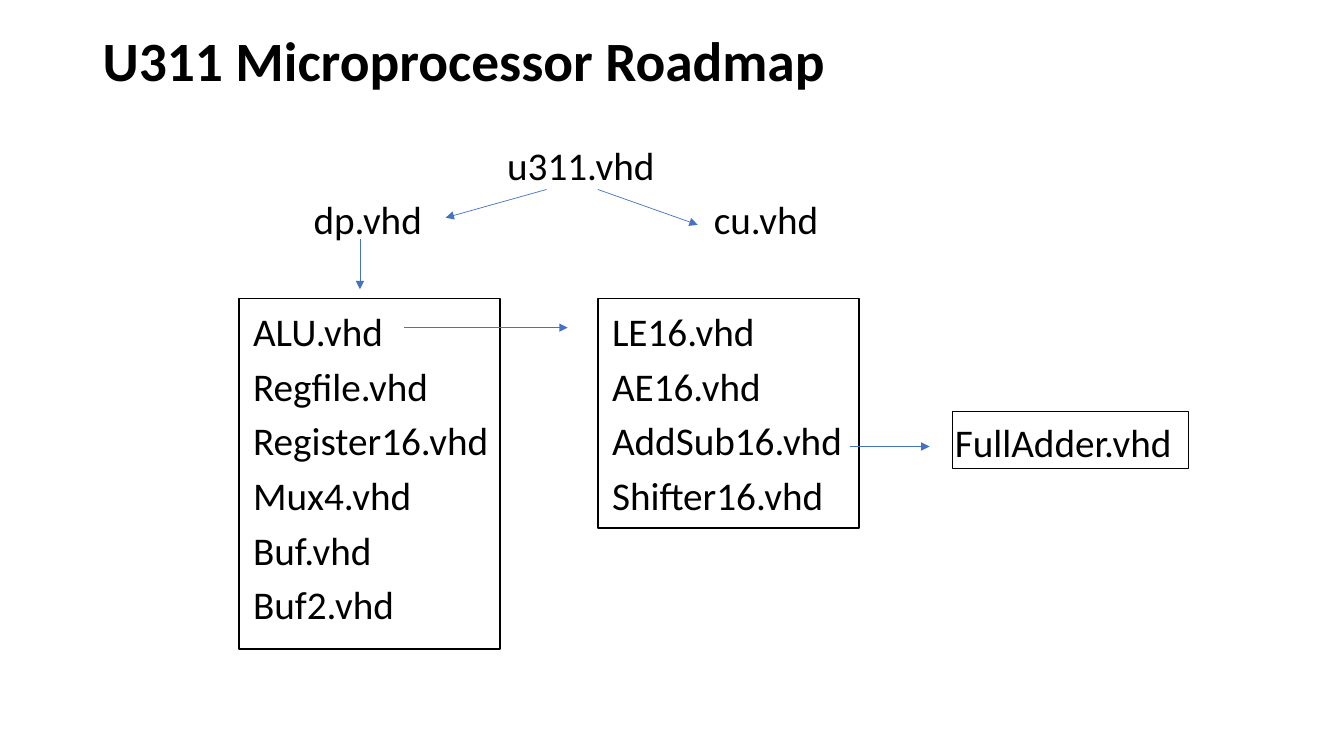
from lxml import etree
from pptx import Presentation
from pptx.dml.color import RGBColor
from pptx.enum.shapes import MSO_CONNECTOR, MSO_SHAPE
from pptx.enum.text import MSO_ANCHOR, PP_ALIGN
from pptx.oxml.ns import qn
from pptx.util import Inches, Pt

RECTANGLE = MSO_SHAPE.RECTANGLE
STRAIGHT = MSO_CONNECTOR.STRAIGHT
LEFT = PP_ALIGN.LEFT
TOP, MIDDLE = MSO_ANCHOR.TOP, MSO_ANCHOR.MIDDLE
COLORS = {"ink": "000000", "arrow": "4472C4"}
FONT = "Calibri"

LABELS = [
    ("u311.vhd", 5.03, 1.4),
    ("dp.vhd", 3.11, 1.94),
    ("cu.vhd", 7.08, 1.94),
]
DATAPATH_FILES = ["ALU.vhd", "Regfile.vhd", "Register16.vhd",
                  "Mux4.vhd", "Buf.vhd", "Buf2.vhd"]
ALU_FILES = ["LE16.vhd", "AE16.vhd", "AddSub16.vhd", "Shifter16.vhd"]
ADDER_FILES = ["FullAdder.vhd"]
FILE_BOXES = [
    (DATAPATH_FILES, (2.37, 2.96, 2.59, 3.48), (0.14, 0.09)),
    (ALU_FILES, (5.93, 2.96, 2.59, 2.28), (0.14, 0.09)),
    (ADDER_FILES, (9.45, 4.08, 2.34, 0.57), (0.02, 0.07)),
]
ARROWS = [
    ((5.42, 1.88), (4.42, 2.16)),
    ((5.93, 1.88), (6.92, 2.23)),
    ((3.57, 2.37), (3.57, 2.87)),
    ((4.01, 3.25), (5.63, 3.25)),
    ((8.43, 4.43), (9.22, 4.43)),
]


def color(name):
    return RGBColor.from_string(COLORS[name])


def write(frame, lines, size=28, bold=False, anchor=TOP, inset=(0, 0),
          line_spacing=1.0, gap=0, wrap=False):
    frame.word_wrap = wrap
    frame.vertical_anchor = anchor
    frame.margin_left, frame.margin_top = map(Inches, inset)
    frame.margin_right = frame.margin_bottom = 0
    for index, line in enumerate(lines):
        paragraph = frame.add_paragraph() if index else frame.paragraphs[0]
        paragraph.alignment = LEFT
        paragraph.line_spacing = line_spacing
        paragraph.space_after = Pt(gap)
        run = paragraph.add_run()
        run.text = line
        run.font.name = FONT
        run.font.size = Pt(size)
        run.font.bold = bold
        run.font.color.rgb = color("ink")


def add_label(slide, text, box, **text_format):
    label = slide.shapes.add_textbox(*map(Inches, box))
    write(label.text_frame, [text], **text_format)


def add_file_box(slide, files, box, inset):
    outline = slide.shapes.add_shape(RECTANGLE, *map(Inches, box))
    outline.shadow.inherit = False
    outline.fill.background()
    outline.line.color.rgb = color("ink")
    outline.line.width = Pt(1)
    write(outline.text_frame, files, inset=inset, gap=5.4)


def add_arrow(slide, start, end):
    arrow = slide.shapes.add_connector(STRAIGHT, *map(Inches, start + end))
    arrow.line.color.rgb = color("arrow")
    arrow.line.width = Pt(0.5)
    etree.SubElement(arrow.line._get_or_add_ln(), qn("a:tailEnd"), type="triangle")
    etree.SubElement(arrow._element.spPr, qn("a:effectLst"))


def main():
    deck = Presentation()
    deck.slide_width, deck.slide_height = Inches(13.33), Inches(7.5)
    slide = deck.slides.add_slide(deck.slide_layouts[6])

    add_label(slide, "U311 Microprocessor Roadmap", (0.92, 0.4, 11.5, 0.47),
              size=39.6, bold=True, anchor=MIDDLE, inset=(0.1, 0),
              line_spacing=0.9, wrap=True)
    for text, left, top in LABELS:
        add_label(slide, text, (left, top, 1.6, 0.48))
    for files, box, inset in FILE_BOXES:
        add_file_box(slide, files, box, inset)
    for start, end in ARROWS:
        add_arrow(slide, start, end)

    deck.save("out.pptx")


if __name__ == "__main__":
    main()
